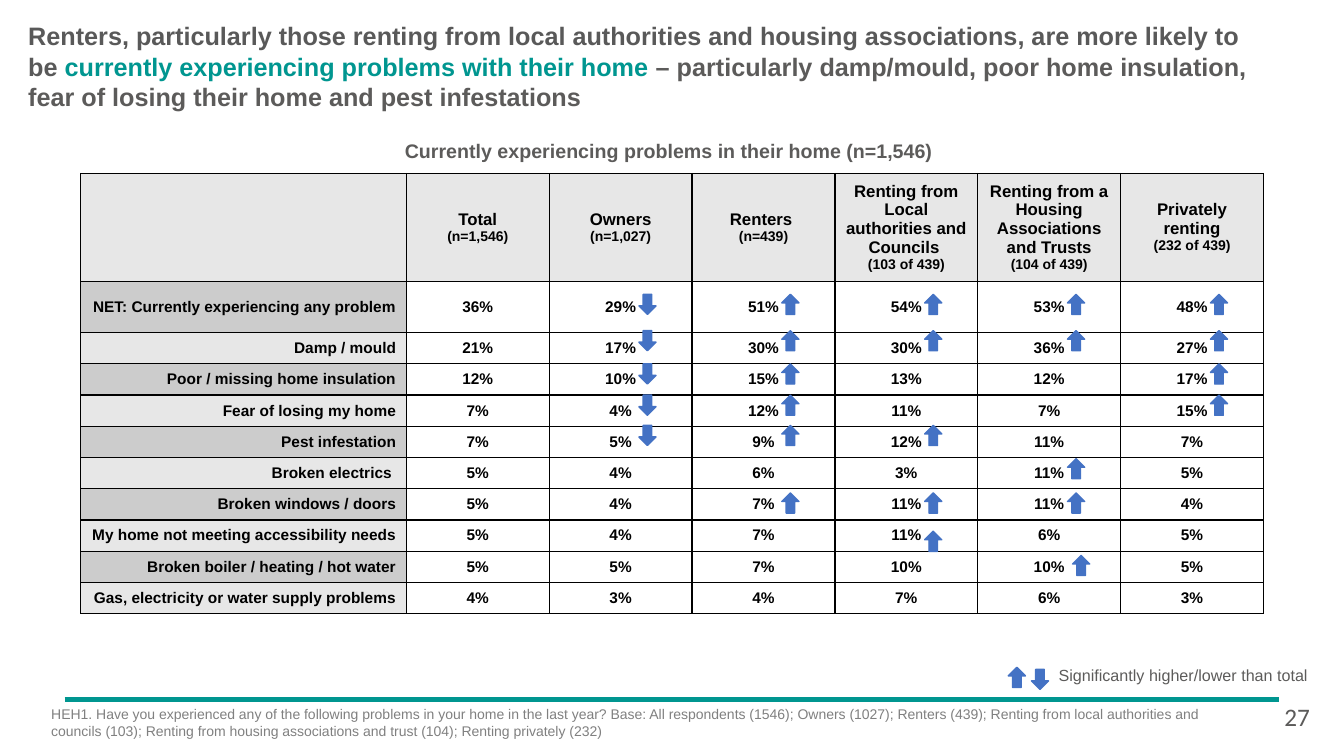
"""Build the slide on problems that owners and renters have in their home."""
from lxml import etree
from pptx import Presentation
from pptx.dml.color import RGBColor
from pptx.enum.shapes import MSO_CONNECTOR, MSO_SHAPE
from pptx.enum.text import MSO_ANCHOR, PP_ALIGN
from pptx.oxml.ns import qn
from pptx.util import Inches, Pt

LEFT, MID, RIGHT = PP_ALIGN.LEFT, PP_ALIGN.CENTER, PP_ALIGN.RIGHT
TOP, CENTER = MSO_ANCHOR.TOP, MSO_ANCHOR.MIDDLE
DOWN = MSO_SHAPE.DOWN_ARROW
STRAIGHT = MSO_CONNECTOR.STRAIGHT

THEME = {
    "font": "Arial", "number font": "Calibri",
    "title": 18, "chart": 14, "head": 12, "cell": 11, "base": 10, "key": 11.5,
    "dark": "595959", "gray": "5C5B5A", "note": "808080", "teal": "009690",
    "blue": "4472C4", "ink": "000000", "light": "E7E7E7", "mid": "CCCCCC",
}

TITLE = [
    ("Renters, particularly those renting from local authorities and housing "
     "associations, are more likely to be ", "dark"),
    ("currently experiencing problems with their home ", "teal"),
    ("– particularly damp/mould, poor home insulation, fear of losing their "
     "home and pest infestations", "gray"),
]
CHART = "Currently experiencing problems in their home (n=1,546)"
KEY = "Significantly higher/lower than total"
NOTE = ("HEH1. Have you experienced any of the following problems in your home "
        "in the last year? Base: All respondents (1546); Owners (1027); Renters "
        "(439); Renting from local authorities and councils (103); Renting from "
        "housing associations and trust (104); Renting privately (232)")
PAGE = "27"

HEADS = [
    [["Total"], ["(n=1,546)"]],
    [["Owners ", "(n=1,027)"]],
    [["Renters "], ["(n=439)"]],
    [["Renting from Local authorities and Councils "], ["(103 of 439)"]],
    [["Renting from a Housing Associations and Trusts"], ["(104 of 439)"]],
    [["Privately renting"], ["(232 of 439)"]],
]
ROWS = [
    ("NET: Currently experiencing any problem", (36, 29, 51, 54, 53, 48), 2.92, "-vAAAA"),
    ("Damp / mould", (21, 17, 30, 30, 36, 27), 3.28, "-vAAAA"),
    ("Poor / missing home insulation", (12, 10, 15, 13, 12, 17), 3.61, "-vA--A"),
    ("Fear of losing my home", (7, 4, 12, 11, 7, 15), 3.92, "-vA--A"),
    ("Pest infestation", (7, 5, 9, 12, 11, 7), 4.22, "-vAA--"),
    ("Broken electrics ", (5, 4, 6, 3, 11, 5), 4.55, "----A-"),
    ("Broken windows / doors", (5, 4, 7, 11, 11, 4), 4.89, "--AAA-"),
    ("My home not meeting accessibility needs ", (5, 4, 7, 11, 6, 5), 5.27, "---A--"),
    ("Broken boiler / heating / hot water", (5, 5, 7, 10, 10, 5), 5.51, "----A-"),
    ("Gas, electricity or water supply problems ", (4, 3, 4, 7, 6, 3), 5.8, "------"),
]
NUDGE = {8: 0.05}

LABEL, STEP = 3.23, 1.417
HIGH = [1.07, 0.51] + [0.31] * 9
MARK = 4.92


def color(name):
    return RGBColor.from_string(THEME[name])


def write(para, parts, align=LEFT, bold=False, font="font"):
    """Fill a paragraph with (text, size, color) parts."""
    para.alignment = align
    para.font.name, para.font.bold = THEME[font], bold
    same = len({part[1:] for part in parts}) == 1
    for text, size, tint in parts:
        run = para.add_run()
        run.text = text
        face = para.font if same else run.font
        face.size, face.color.rgb = Pt(THEME[size]), color(tint)


def label(host, box, parts, inset=True, wrap=True, anchor=TOP, **style):
    """Add a text box of one paragraph."""
    frame = host.shapes.add_textbox(*map(Inches, box)).text_frame
    frame.word_wrap, frame.vertical_anchor = wrap, anchor
    if not inset:
        frame.margin_left = frame.margin_right = 0
        frame.margin_top = frame.margin_bottom = 0
    write(frame.paragraphs[0], parts, **style)


def arrow(host, left, top, rise):
    """Add a small arrow that points up or down."""
    mark = host.shapes.add_shape(DOWN, *map(Inches, (left, top, 0.17, 0.2)))
    mark.shadow.inherit = False
    mark.rotation = 180 if rise else 0
    mark.fill.solid()
    mark.fill.fore_color.rgb = mark.line.color.rgb = color("blue")
    mark.line.width = Pt(1)


def dress(cell, tint):
    """Give a cell black borders and its fill."""
    props = cell._tc.get_or_add_tcPr()
    for side in ("a:lnL", "a:lnR", "a:lnT", "a:lnB"):
        line = etree.SubElement(props, qn(side), w="12700")
        fill = etree.SubElement(line, qn("a:solidFill"))
        etree.SubElement(fill, qn("a:srgbClr"), val=THEME["ink"])
    cell.vertical_anchor = CENTER
    if tint:
        cell.fill.solid()
        cell.fill.fore_color.rgb = color(tint)
    else:
        cell.fill.background()


def grid(slide):
    """Add the table of shares by tenure."""
    wide = [LABEL] + [STEP] * len(HEADS)
    box = (0.8, 1.72, sum(wide), sum(HIGH))
    table = slide.shapes.add_table(len(HIGH), len(wide), *map(Inches, box)).table
    table.first_row = table.horz_banding = False
    for col, size in zip(table.columns, wide):
        col.width = Inches(size)
    for row, size in zip(table.rows, HIGH):
        row.height = Inches(size)
    dress(table.cell(0, 0), "light")
    for c, head in enumerate(HEADS, 1):
        cell = table.cell(0, c)
        dress(cell, "light")
        for i, texts in enumerate(head):
            frame = cell.text_frame
            para = frame.add_paragraph() if i else frame.paragraphs[0]
            parts = [(t, "base" if t[0] == "(" else "head", "ink") for t in texts]
            write(para, parts, MID, True)
    for r, (name, shares, _, _) in enumerate(ROWS, 1):
        for c, text in enumerate([name] + [f"{share}%" for share in shares]):
            cell = table.cell(r, c)
            dress(cell, None if c else ("mid" if r % 2 else "light"))
            write(cell.text_frame.paragraphs[0], [(text, "cell", "ink")],
                  MID if c else RIGHT, True)


def main():
    deck = Presentation()
    deck.slide_width, deck.slide_height = Inches(13.33), Inches(7.5)
    slide = deck.slides.add_slide(deck.slide_layouts[6])

    ends = map(Inches, (0.64, 6.94, 12.69, 6.94))
    rule = slide.shapes.add_connector(STRAIGHT, *ends)
    rule.line.color.rgb, rule.line.width = color("teal"), Pt(3)
    etree.SubElement(rule._element.spPr, qn("a:effectLst"))

    label(slide, (0.28, 0.2, 12.29, 0.91),
          [(text, "title", tint) for text, tint in TITLE],
          inset=False, anchor=CENTER, bold=True)
    label(slide, (1.65, 1.38, 9.97, 0.24), [(CHART, "chart", "gray")],
          inset=False, align=MID, bold=True)
    grid(slide)

    key = slide.shapes.add_group_shape()
    arrow(key, 10, 6.62, True)
    label(key, (10.4, 6.55, 2.69, 0.29), [(KEY, "key", "gray")], wrap=False)
    arrow(key, 10.23, 6.64, False)

    for r, (_, _, top, marks) in enumerate(ROWS):
        for c, mark in enumerate(marks):
            if mark != "-":
                left = MARK + c * STEP + NUDGE.get(r, 0)
                arrow(slide, left, top, mark == "A")

    label(slide, (0.41, 6.95, 11.98, 0.4), [(NOTE, "base", "note")])
    label(slide, (12.64, 6.91, 0.62, 0.4), [(PAGE, "title", "gray")],
          font="number font")
    deck.save("out.pptx")


if __name__ == "__main__":
    main()
